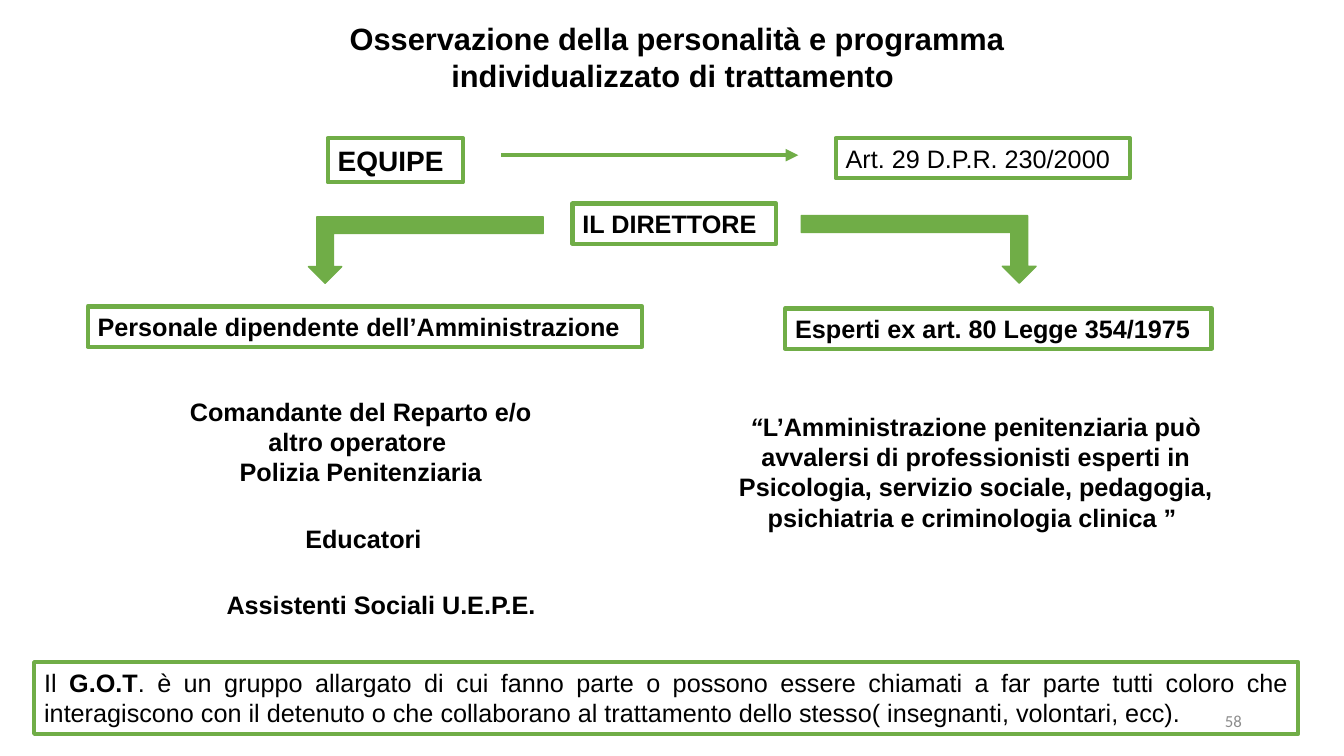
from lxml import etree
from pptx import Presentation, util as u
from pptx.dml.color import RGBColor
from pptx.enum import shapes, text
from pptx.oxml import ns

GREEN = RGBColor(0x70, 0xAD, 0x47)
BLACK = RGBColor(0, 0, 0)
GREY = RGBColor(0x8C, 0x8C, 0x8C)
LEFT, CENTER, RIGHT, JUSTIFY = (
    text.PP_ALIGN.LEFT, text.PP_ALIGN.CENTER,
    text.PP_ALIGN.RIGHT, text.PP_ALIGN.JUSTIFY)


class Board:
    """Draws on one slide; lengths are percentages of its width and height."""

    def __init__(self, prs):
        self.width, self.height = prs.slide_width, prs.slide_height
        self.shapes = prs.slides.add_slide(prs.slide_layouts[6]).shapes

    def place(self, x, y, *size):
        """Turn percentages (x, y[, width, height]) into slide lengths."""
        pairs = zip((x, y, *size), (self.width, self.height) * 2)
        return [round(share * full / 100) for share, full in pairs]

    def fill_text(self, shape, paragraphs, align, size=18, font="Arial",
                  color=BLACK, anchor=text.MSO_ANCHOR.TOP):
        """Each paragraph is a list of (words, style), style using b and i."""
        frame = shape.text_frame
        frame.word_wrap = True
        frame.vertical_anchor = anchor
        for number, runs in enumerate(paragraphs):
            para = frame.add_paragraph() if number else frame.paragraphs[0]
            para.alignment = align
            for words, style in runs:
                run = para.add_run()
                run.text = words
                run.font.name, run.font.size = font, u.Pt(size)
                run.font.bold, run.font.italic = "b" in style, "i" in style
                run.font.color.rgb = color

    def label(self, area, paragraphs, align=CENTER, **style):
        self.fill_text(self.shapes.add_textbox(*self.place(*area)),
                       paragraphs, align, **style)

    def preset(self, kind, area, line_width):
        shape = self.shapes.add_shape(kind, *self.place(*area))
        shape.shadow.inherit = False
        shape.line.color.rgb = GREEN
        shape.line.width = u.Pt(line_width)
        return shape

    def framed(self, area, runs, align=LEFT, **style):
        box = self.preset(shapes.MSO_SHAPE.RECTANGLE, area, 3)
        box.fill.background()
        self.fill_text(box, [runs], align, **style)

    def bent_arrow(self, area, mirrored):
        arrow = self.preset(shapes.MSO_SHAPE.BENT_UP_ARROW, area, 1)
        arrow.fill.solid()
        arrow.fill.fore_color.rgb = GREEN
        if mirrored:
            arrow.rotation = 180
        else:
            arrow.element.spPr.find(ns.qn("a:xfrm")).set("flipV", "1")

    def arrow(self, start, end):
        line = self.shapes.add_connector(
            shapes.MSO_CONNECTOR.STRAIGHT, *self.place(*start), *self.place(*end))
        line.line.color.rgb = GREEN
        line.line.width = u.Pt(3)
        stroke = line.line._get_or_add_ln()
        etree.SubElement(stroke, ns.qn("a:tailEnd"), type="triangle")
        etree.SubElement(stroke.getparent(), ns.qn("a:effectLst"))


def main():
    prs = Presentation()
    prs.slide_width, prs.slide_height = u.Inches(13.33), u.Inches(7.5)
    board = Board(prs)

    # Page number and title
    board.label((70.65, 92.67, 22.5, 5.33), [[("58", "")]], RIGHT, size=12,
                font="Calibri", color=GREY, anchor=text.MSO_ANCHOR.MIDDLE)
    board.label((21.98, 2, 56.78, 11.2), [[(
        "Osservazione della personalità e programma "
        "individualizzato di trattamento ", "b")]], size=22)

    # Team, its legal basis and the director
    board.framed((24.38, 18.27, 10.05, 5.87), [("EQUIPE", "b")], size=20)
    board.arrow((37.28, 20.53), (59.4, 20.53))
    board.framed((62.18, 18.27, 21.9, 5.33), [("Art. 29 D.P.R. 230/2000", "")])
    board.framed((42.6, 26.93, 15.15, 5.33), [("IL DIRETTORE", "b")])

    # Two branches
    board.bent_arrow((22.95, 28.67, 17.47, 8.8), mirrored=True)
    board.bent_arrow((59.62, 28.53, 17.47, 8.93), mirrored=False)
    board.framed((6.52, 40.53, 41.25, 5.33),
                 [("Personale dipendente dell’Amministrazione", "b")])
    board.framed((58.42, 40.8, 31.73, 5.33),
                 [("Esperti ex art. 80 Legge 354/1975", "b")])

    # Staff
    board.label((13.27, 51.73, 27.15, 13.47), [
        [(words, "b")] for words in (
            "Comandante del Reparto e/o ", "altro operatore ",
            "Polizia Penitenziaria")])
    board.label((21.98, 68.53, 10.8, 5.33), [[("Educatori", "b")]], LEFT)
    board.label((16.12, 77.33, 25.27, 5.33),
                [[("Assistenti Sociali U.E.P.E.", "b")]], LEFT)

    # Experts
    board.label((52.87, 53.73, 39.45, 17.47), [[("“", "bi"), (
        "L’Amministrazione penitenziaria può avvalersi di professionisti "
        "esperti in Psicologia, servizio sociale, pedagogia, psichiatria e "
        "criminologia clinica ” ", "b")]])

    # Extended group
    board.framed((2.55, 87.6, 94.05, 9.47), [
        ("Il ", ""), ("G.O.T", "b"),
        (". è un gruppo allargato di cui fanno parte o possono essere chiamati "
         "a far parte tutti coloro che interagiscono con il detenuto o che "
         "collaborano al trattamento dello stesso( insegnanti, volontari, "
         "ecc). ", "")], JUSTIFY)

    prs.save("out.pptx")


if __name__ == "__main__":
    main()
